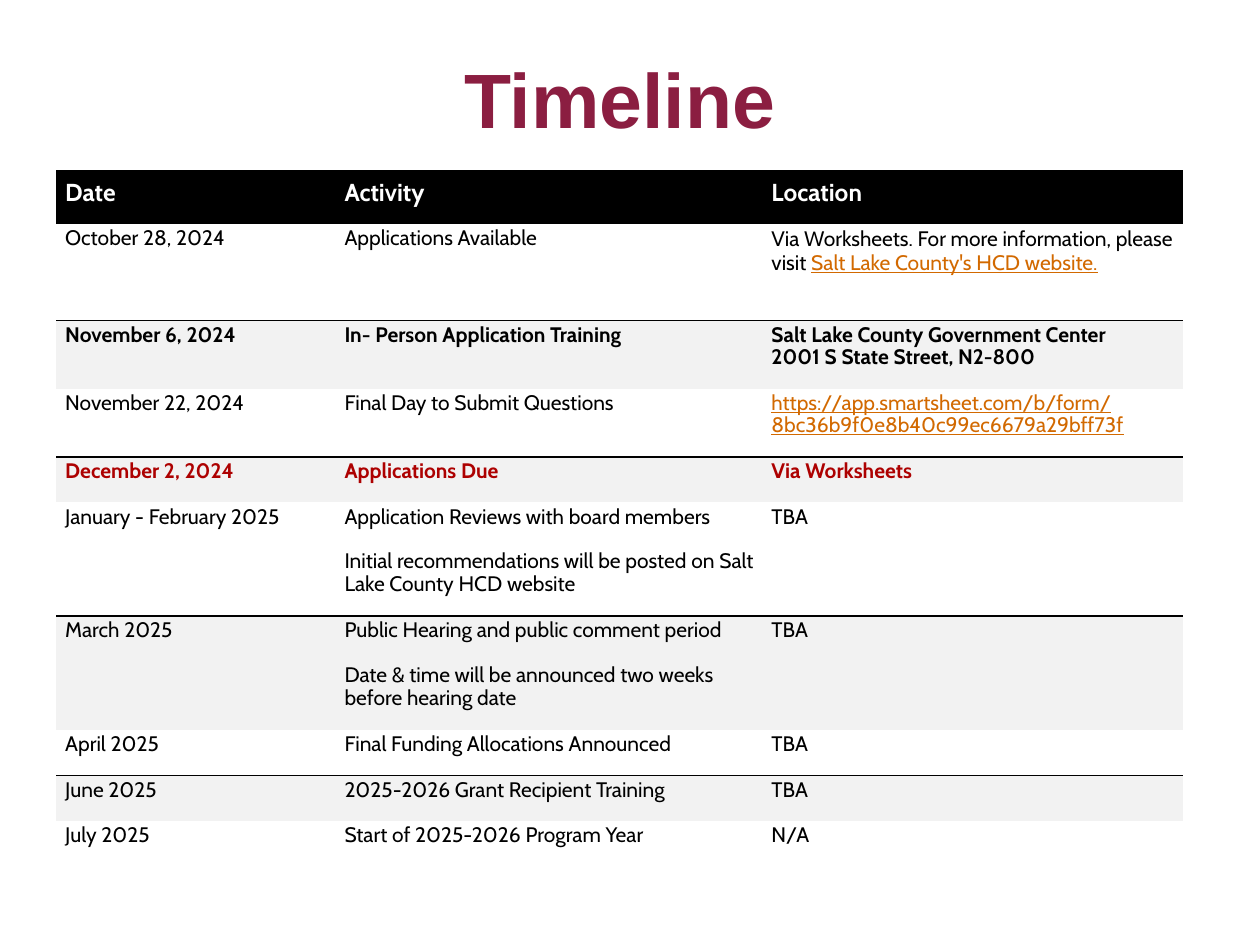
"""Build the grant timeline slide."""
import pptx
import pptx.util
import pptx.dml.color
import pptx.enum.text
from dataclasses import dataclass
from lxml import etree

Pt = pptx.util.Pt
Anchor = pptx.enum.text.MSO_ANCHOR
Align = pptx.enum.text.PP_ALIGN


@dataclass(frozen=True)
class Theme:
    head: str = "Arial"
    body: str = "Cabin"
    black: str = "000000"
    white: str = "FFFFFF"
    wine: str = "8B1E41"
    red: str = "AD0101"
    link: str = "D26900"
    band: str = "F2F2F2"
    big: float = 44
    mid: float = 14
    small: float = 12
    lead: float = 12.8
    wide: float = 13.5


T = Theme()
TITLE = "Timeline"
HEADS = ["Date", "Activity", "Location"]
LOOKS = {
    "head": dict(size=T.mid, color=T.white, bold=True),
    "plain": dict(gap=T.lead),
    "bold": dict(bold=True),
    "due": dict(bold=True, color=T.red),
}
ROWS = [
    ("head", 30.7, HEADS),
    ("plain", 55.4, ["October 28, 2024", "Applications Available",
                     [("Via Worksheets. For more information, please visit ",
                       "Salt Lake County's HCD website.")]]),
    ("bold", 39, ["November 6, 2024", "In- Person Application Training",
                  ["Salt Lake County Government Center",
                   "2001 S State Street, N2-800"]]),
    ("plain", 39, ["November 22, 2024", "Final Day to Submit Questions",
                   [("", "https://app.smartsheet.com/b/form/"
                     "8bc36b9f0e8b40c99ec6679a29bff73f")]]),
    ("due", 26, ["December 2, 2024", "Applications Due", "Via Worksheets"]),
    ("plain", 65, ["January - February 2025",
                   ["Application Reviews with board members",
                    "Initial recommendations will be posted on "
                    "Salt Lake County HCD website"], "TBA"]),
    ("plain", 65, ["March 2025",
                   ["Public Hearing and public comment period",
                    "Date & time will be announced two weeks "
                    "before hearing date"], "TBA"]),
    ("plain", 26, ["April 2025", "Final Funding Allocations Announced", "TBA"]),
    ("plain", 26, ["June 2025", "2025-2026 Grant Recipient Training", "TBA"]),
    ("plain", 26, ["July 2025", "Start of 2025-2026 Program Year", "N/A"]),
]
COLS = [159.6, 244, 240.4]
LEFT, TOP = 32.1, 97.1


def write(frame, text, size=T.small, color=T.black, bold=False, name=T.body,
          lead=T.lead, gap=0, align=Align.LEFT):
    """Fill a frame; a (plain, link) pair ends its paragraph in link style."""
    paras = [text] if isinstance(text, str) else text
    for n, item in enumerate(paras):
        para = frame.add_paragraph() if n else frame.paragraphs[0]
        para.alignment = align
        plain, link = (item, "") if isinstance(item, str) else item
        if lead:
            para.line_spacing = Pt(T.wide if plain and link else lead)
        para.space_before = Pt(gap if n else 0)
        for part, tint, under in ((plain, color, False), (link, T.link, True)):
            if part:
                run = para.add_run()
                run.text = part
                font = run.font
                font.name, font.size, font.bold = name, Pt(size), bold
                font.underline = under
                font.color.rgb = pptx.dml.color.RGBColor.from_string(tint)


def edge(cell, lines):
    """Draw the named sides in black and clear the rest."""
    props = cell._tc.get_or_add_tcPr()
    space = "{http://schemas.openxmlformats.org/drawingml/2006/main}"
    for side in "LRTB":
        line = etree.SubElement(props, space + "ln" + side, w=str(Pt(1)))
        if side in lines:
            fill = etree.SubElement(line, space + "solidFill")
            etree.SubElement(fill, space + "srgbClr", val=T.black)
        else:
            etree.SubElement(line, space + "noFill")


def paint(cell, color):
    """Fill a cell, or leave it clear when there is no color."""
    if color:
        cell.fill.solid()
        cell.fill.fore_color.rgb = pptx.dml.color.RGBColor.from_string(color)
    else:
        cell.fill.background()


def main():
    deck = pptx.Presentation()
    deck.slide_width, deck.slide_height = Pt(720), Pt(540)
    slide = deck.slides.add_slide(deck.slide_layouts[5])

    title = slide.shapes.title
    title.left, title.top, title.width, title.height = map(Pt, (30.2, 15.1, 648, 82))
    title.text_frame.vertical_anchor = Anchor.MIDDLE
    write(title.text_frame, TITLE, size=T.big, color=T.wine, bold=True,
          name=T.head, lead=None, align=Align.CENTER)

    high = sum(row[1] for row in ROWS)
    grid = slide.shapes.add_table(len(ROWS), len(COLS), Pt(LEFT), Pt(TOP),
                                  Pt(sum(COLS)), Pt(high)).table
    grid.first_row = grid.horz_banding = False
    for col, width in zip(grid.columns, COLS):
        col.width = Pt(width)

    last = len(ROWS) - 1
    for r, (look, tall, texts) in enumerate(ROWS):
        grid.rows[r].height = Pt(tall)
        band = r > 0 and r % 2 == 0
        lines = "T" if band else "B" if 0 < r < last else ""
        for c, text in enumerate(texts):
            cell = grid.cell(r, c)
            cell.margin_left, cell.margin_right = Pt(5.2), Pt(3.6)
            cell.margin_top, cell.margin_bottom = Pt(2.6 if r else 7.2), Pt(7.2)
            cell.vertical_anchor = Anchor.TOP if r else Anchor.MIDDLE
            edge(cell, lines)
            paint(cell, T.black if r == 0 else T.band if band else None)
            write(cell.text_frame, text, **LOOKS[look])

    deck.save("out.pptx")


if __name__ == "__main__":
    main()
